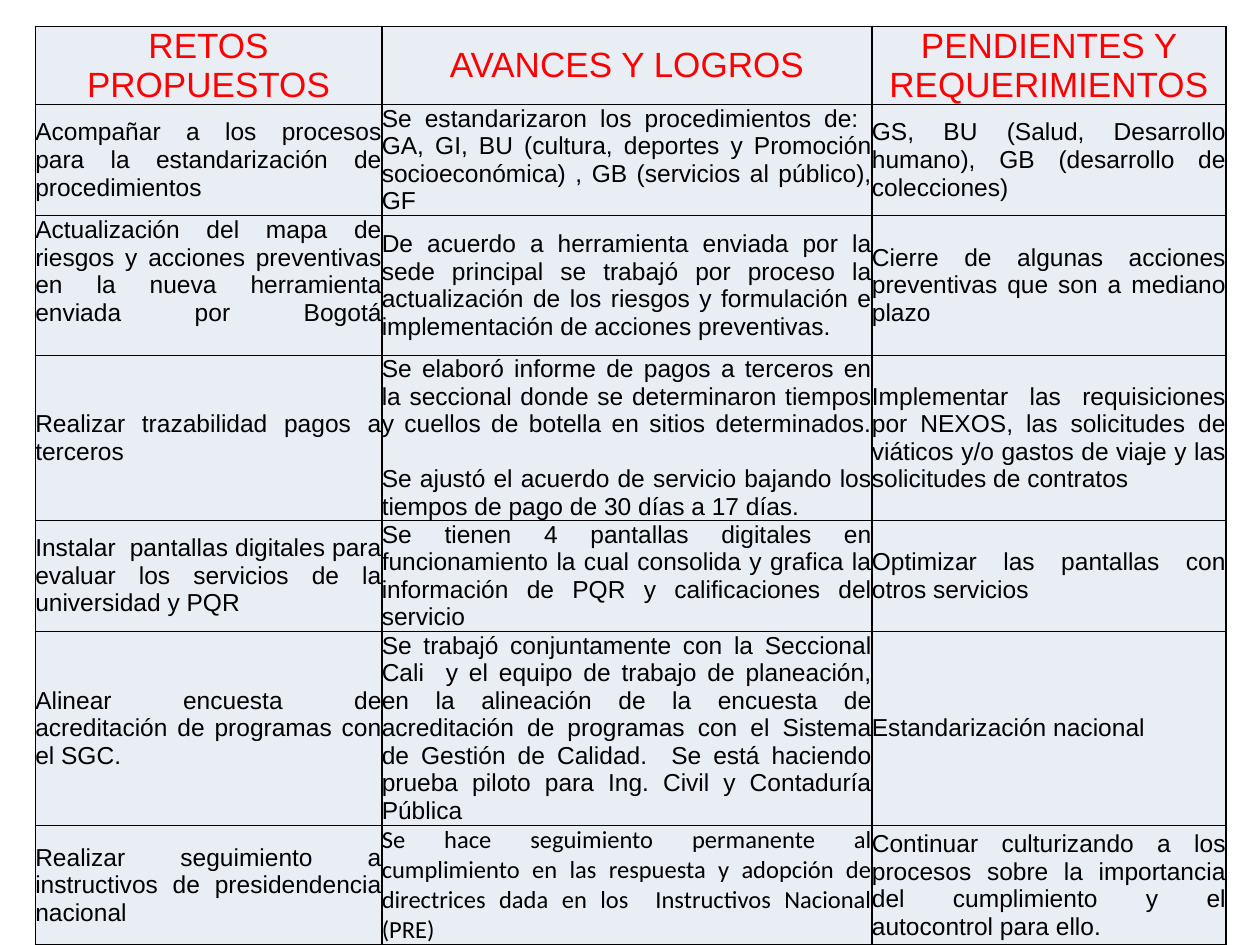
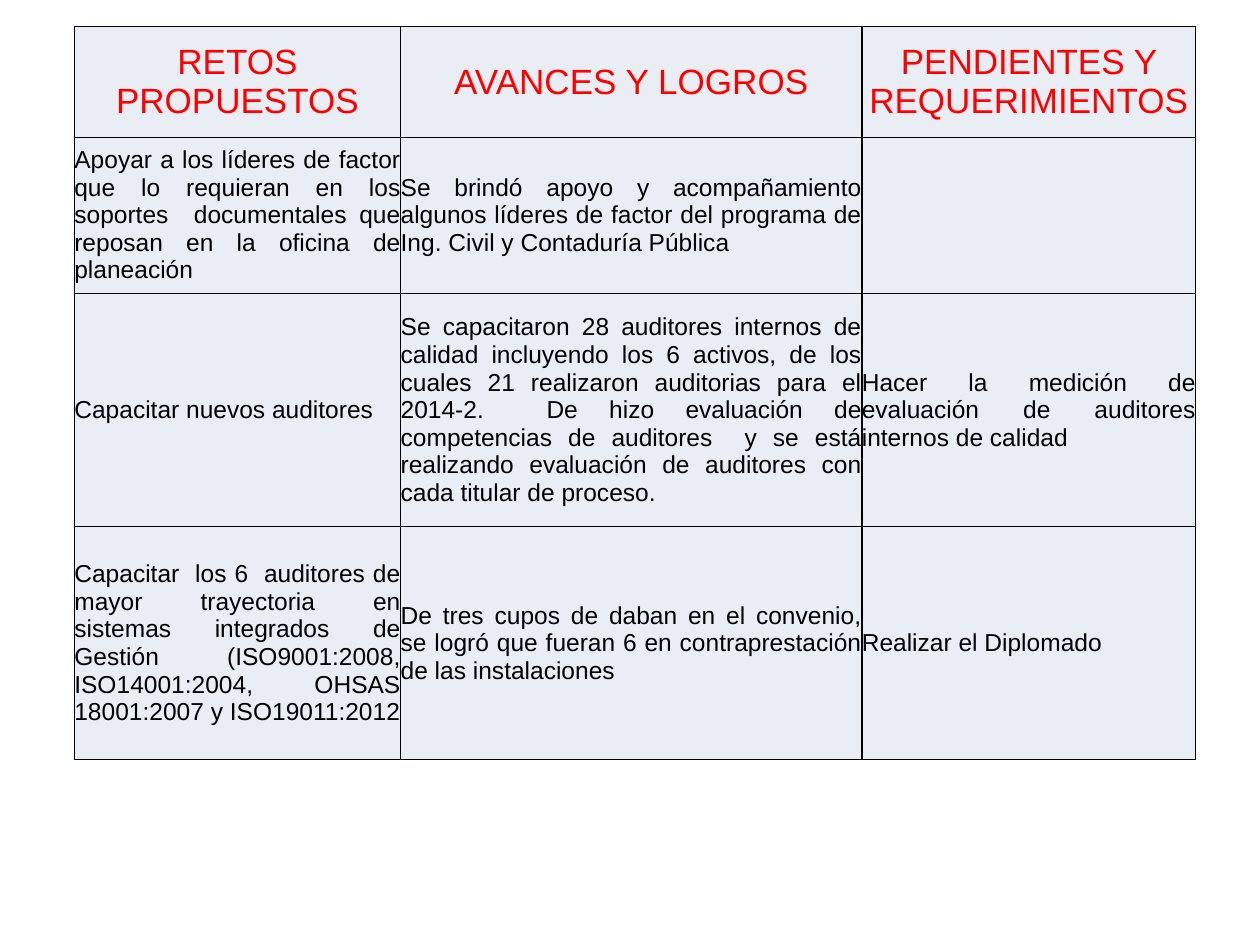
"""Builds two table slides on quality-management goals, progress and pending work."""
from lxml.etree import SubElement
from pptx import Presentation
from pptx.dml.color import RGBColor
from pptx.enum.text import MSO_ANCHOR, PP_ALIGN
from pptx.oxml.ns import qn
from pptx.util import Inches, Pt

COLORS = {"header": "FF0000", "body": "000000", "cell": "E9EDF4", "border": "000000"}
HEADINGS = ("RETOS PROPUESTOS", "AVANCES Y LOGROS", "PENDIENTES Y REQUERIMIENTOS")

PROCESS_GOALS = [
    ("Acompañar a los procesos para la estandarización de procedimientos ",
     "Se estandarizaron los procedimientos de:  GA, GI, BU (cultura, deportes y "
     "Promoción socioeconómica) , GB (servicios al público), GF",
     "GS, BU (Salud, Desarrollo humano), GB (desarrollo de colecciones)"),
    ("Actualización del mapa de riesgos y acciones preventivas en la nueva "
     "herramienta enviada por Bogotá\n",
     "De acuerdo a herramienta enviada por la sede principal se trabajó por proceso "
     "la actualización de los riesgos y formulación e implementación de acciones "
     "preventivas.",
     "Cierre de algunas acciones preventivas que son a mediano plazo"),
    ("Realizar trazabilidad pagos a terceros",
     "Se elaboró informe de pagos a terceros en la seccional donde se determinaron "
     "tiempos y cuellos de botella en sitios determinados.\n\n"
     "Se ajustó el acuerdo de servicio bajando los tiempos de pago de 30 días a 17 días.",
     "Implementar las requisiciones por NEXOS, las solicitudes de viáticos y/o gastos "
     "de viaje y las solicitudes de contratos"),
    ("Instalar  pantallas digitales para evaluar los servicios de la universidad y PQR",
     "Se tienen 4 pantallas digitales en funcionamiento la cual consolida y grafica la "
     "información de PQR y calificaciones del servicio",
     "Optimizar las pantallas con otros servicios "),
    ("Alinear encuesta de acreditación de programas con el SGC.",
     "Se trabajó conjuntamente con la Seccional Cali  y el equipo de trabajo de "
     "planeación, en la alineación de la encuesta de acreditación de programas con el "
     "Sistema de Gestión de Calidad.  Se está haciendo prueba piloto para Ing. Civil y "
     "Contaduría Pública  ",
     "Estandarización nacional"),
    ("Realizar seguimiento a instructivos de presidendencia nacional",
     "Se hace seguimiento permanente al cumplimiento en las respuesta y adopción de "
     "directrices dada en los  Instructivos Nacional (PRE)",
     "Continuar culturizando a los procesos sobre la importancia del cumplimiento y el "
     "autocontrol para ello."),
]

AUDIT_GOALS = [
    ("Apoyar a los líderes de factor que lo requieran en los soportes  documentales que "
     "reposan en la oficina de planeación",
     "Se brindó apoyo y acompañamiento algunos líderes de factor del programa de "
     "Ing. Civil y Contaduría Pública",
     ""),
    ("Capacitar nuevos auditores",
     "Se capacitaron 28 auditores internos de calidad incluyendo los 6 activos, de los "
     "cuales 21 realizaron auditorias para el 2014-2.  De hizo evaluación de "
     "competencias de auditores  y se está realizando evaluación de auditores con cada "
     "titular de proceso.",
     "Hacer la medición de evaluación de auditores internos de calidad"),
    ("Capacitar  los 6  auditores de mayor trayectoria en sistemas integrados de Gestión "
     "(ISO9001:2008, ISO14001:2004, OHSAS 18001:2007 y ISO19011:2012",
     "De tres cupos de daban en el convenio, se logró que fueran 6 en contraprestación "
     "de las instalaciones",
     "Realizar el Diplomado"),
]


class GoalDeck:
    """Holds the table style and the current slide."""

    def __init__(self):
        """Start an empty 10 by 7.5 inch presentation."""
        self.presentation = Presentation()
        self.presentation.slide_width = Inches(10)
        self.presentation.slide_height = Inches(7.5)
        self.slide = None

    def add_slide(self):
        """Add a blank slide and make it current."""
        self.slide = self.presentation.slides.add_slide(self.presentation.slide_layouts[6])

    def add_goals(self, left, widths, heights, goals):
        """Add a table of goals below the shared headings and return it."""
        rows = [HEADINGS, *goals]
        table = self.slide.shapes.add_table(
            len(rows), len(widths), Inches(left), Inches(0.21),
            Inches(sum(widths)), Inches(sum(heights))).table
        table.first_row = table.horz_banding = False
        for column, width in zip(table.columns, widths):
            column.width = Inches(width)
        for row, height, texts in zip(table.rows, heights, rows):
            row.height = Inches(height)
            for cell, text in zip(row.cells, texts):
                self.format_cell(cell, text, texts is HEADINGS)
        return table

    def format_cell(self, cell, text, is_heading):
        """Write one cell with its borders, fill and text style."""
        cell.margin_left = cell.margin_right = cell.margin_top = cell.margin_bottom = 0
        cell.vertical_anchor = MSO_ANCHOR.MIDDLE
        self.add_borders(cell)
        cell.fill.solid()
        cell.fill.fore_color.rgb = RGBColor.from_string(COLORS["cell"])
        paragraph = cell.text_frame.paragraphs[0]
        paragraph.text = text
        paragraph.alignment = PP_ALIGN.CENTER if is_heading else PP_ALIGN.JUSTIFY
        paragraph.font.name = "Arial"
        paragraph.font.size = Pt(20 if is_heading else 14)
        paragraph.font.color.rgb = RGBColor.from_string(
            COLORS["header" if is_heading else "body"])

    def add_borders(self, cell):
        """Draw a thin line on all four sides of a cell."""
        properties = cell._tc.get_or_add_tcPr()
        for side in ("a:lnL", "a:lnR", "a:lnT", "a:lnB"):
            line = SubElement(properties, qn(side), w=str(Pt(1)))
            fill = SubElement(line, qn("a:solidFill"))
            SubElement(fill, qn("a:srgbClr"), val=COLORS["border"])


def main():
    """Build and save both slides."""
    deck = GoalDeck()

    deck.add_slide()
    process_table = deck.add_goals(
        0.28, (2.75, 3.89, 2.81), (0.62, 0.88, 1.11, 1.31, 0.88, 1.54, 0.95), PROCESS_GOALS)
    instructions_progress = process_table.cell(len(PROCESS_GOALS), 1)
    instructions_progress.text_frame.paragraphs[0].font.name = "Calibri"

    deck.add_slide()
    deck.add_goals(0.59, (2.59, 3.66, 2.65), (0.88, 1.24, 1.85, 1.85), AUDIT_GOALS)

    deck.presentation.save("out.pptx")


if __name__ == "__main__":
    main()
